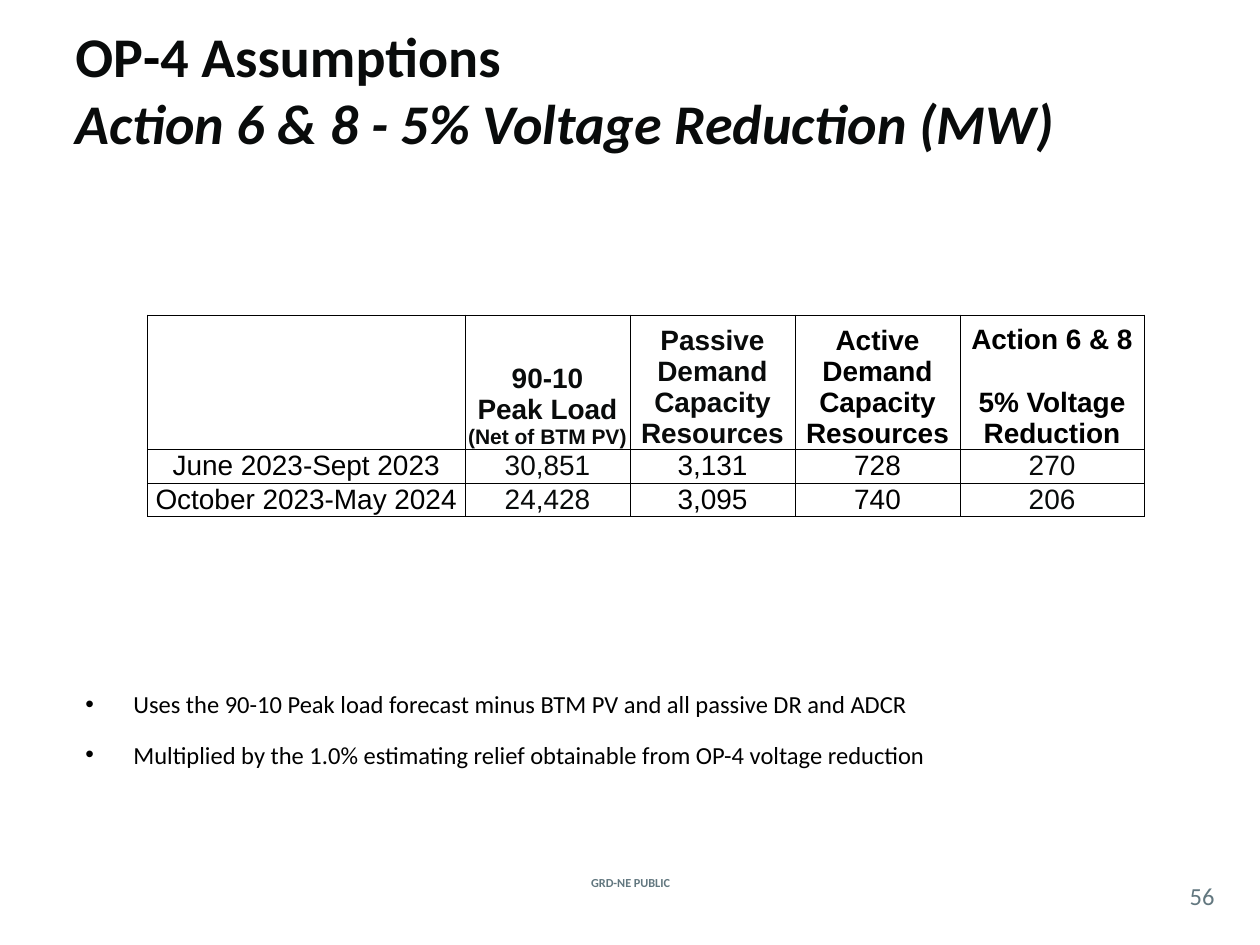
from lxml import etree
from pptx import Presentation
from pptx.dml.color import RGBColor
from pptx.enum.text import MSO_ANCHOR as Anchor, PP_ALIGN as Align
from pptx.oxml.ns import qn
from pptx.util import Inches, Pt

COLORS = {"ink": "090B0B", "black": "000000", "slate": "62777F"}
HEADER = [
    [],
    [("90-10", 16), ("Peak Load", 16), ("(Net of BTM PV)", 12)],
    [("Passive", 16), ("Demand Capacity Resources", 16)],
    [("Active Demand Capacity Resources", 16)],
    [("Action 6 & 8", 16), ("5% Voltage Reduction", 16)],
]
ROWS = [
    ["June 2023-Sept 2023", "30,851", "3,131", "728", "270"],
    ["October 2023-May 2024", "24,428", "3,095", "740", "206"],
]
HEADER_COLORS = ["ink", "ink", "ink", "black", "black"]
BODY_COLORS = ["black", "ink", "black", "black", "ink"]
COL_WIDTHS = [2.52, 1.31, 1.31, 1.31, 1.46]
ROW_HEIGHTS = [0.98, 0.25, 0.25]
BULLETS = [
    "Uses the 90-10 Peak load forecast minus BTM PV and all passive DR and ADCR",
    "Multiplied by the 1.0% estimating relief obtainable from OP-4 voltage reduction",
]


def style(font, size, color, name="Calibri", bold=False, italic=False):
    font.name, font.size, font.bold, font.italic = name, Pt(size), bold, italic
    font.color.rgb = RGBColor.from_string(COLORS[color])


def add_box(slide, box, anchor=Anchor.MIDDLE):
    tf = slide.shapes.add_textbox(*map(Inches, box)).text_frame
    tf.word_wrap = True
    tf.vertical_anchor = anchor
    return tf


def clear_margins(frame):
    frame.margin_left = frame.margin_right = frame.margin_top = frame.margin_bottom = 0


def add_title(slide, box):
    p = add_box(slide, box).paragraphs[0]
    for text, color, italic in [("OP", "ink", False), ("-", "black", False),
                                ("4 Assumptions", "ink", False),
                                ("Action 6 & 8 - 5% Voltage Reduction (MW)", "ink", True)]:
        if italic:
            p.add_line_break()
        r = p.add_run()
        r.text = text
        style(r.font, 32, color, bold=True, italic=italic)


def add_borders(cell):
    tcPr = cell._tc.get_or_add_tcPr()
    for i, side in enumerate(("lnL", "lnR", "lnT", "lnB")):
        ln = etree.Element(qn(f"a:{side}"), w=str(Pt(0.5)))
        fill = etree.SubElement(ln, qn("a:solidFill"))
        etree.SubElement(fill, qn("a:srgbClr"), val=COLORS["black"])
        tcPr.insert(i, ln)


def fill_cell(cell, lines, color, bold, anchor):
    clear_margins(cell)
    cell.vertical_anchor = anchor
    cell.fill.background()
    add_borders(cell)
    tf = cell.text_frame
    tf.text = "\n".join(text for text, _ in lines)
    for p, (_, size) in zip(tf.paragraphs, lines):
        p.alignment = Align.CENTER
        for r in p.runs:
            style(r.font, size, color, "Arial", bold)


def add_load_table(slide, left, top):
    size = (sum(COL_WIDTHS), sum(ROW_HEIGHTS))
    table = slide.shapes.add_table(len(ROW_HEIGHTS), len(COL_WIDTHS),
                                   *map(Inches, (left, top, *size))).table
    table.first_row = table.horz_banding = False
    for col, width in zip(table.columns, COL_WIDTHS):
        col.width = Inches(width)
    for row, height in zip(table.rows, ROW_HEIGHTS):
        row.height = Inches(height)
    for c, lines in enumerate(HEADER):
        fill_cell(table.cell(0, c), lines, HEADER_COLORS[c], True, Anchor.BOTTOM)
    for r, values in enumerate(ROWS, 1):
        for c, value in enumerate(values):
            fill_cell(table.cell(r, c), [(value, 16)], BODY_COLORS[c], False, Anchor.MIDDLE)
    table.cell(0, 4).text_frame.paragraphs[1].space_before = Pt(18)


def add_bullets(slide, box):
    tf = add_box(slide, box, Anchor.TOP)
    tf.text = "\n".join(BULLETS)
    for i, p in enumerate(tf.paragraphs):
        pPr = p._p.get_or_add_pPr()
        pPr.set("marL", str(Inches(0.38)))
        pPr.set("indent", str(Inches(-0.38)))
        etree.SubElement(pPr, qn("a:buFont"), typeface="Arial")
        etree.SubElement(pPr, qn("a:buChar"), char="•")
        if i:
            p.space_before = Pt(12)
        style(p.runs[0].font, 14, "black")


def add_footer(slide, box, text, size, bold):
    tf = add_box(slide, box)
    clear_margins(tf)
    tf.text = text
    p = tf.paragraphs[0]
    p.alignment = Align.CENTER
    style(p.runs[0].font, size, "slate", bold=bold)


def main():
    prs = Presentation()
    prs.slide_width, prs.slide_height = Inches(10), Inches(7.5)
    slide = prs.slides.add_slide(prs.slide_layouts[6])
    add_footer(slide, (4.27, 6.92, 1.47, 0.17), "GRD-NE PUBLIC", 7, True)
    add_title(slide, (0.5, 0.08, 9, 1.25))
    add_bullets(slide, (0.58, 5.42, 8.75, 1.25))
    add_footer(slide, (9.33, 6.96, 0.42, 0.29), "56", 14, False)
    add_load_table(slide, 1.17, 2.5)
    prs.save("out.pptx")


if __name__ == "__main__":
    main()
